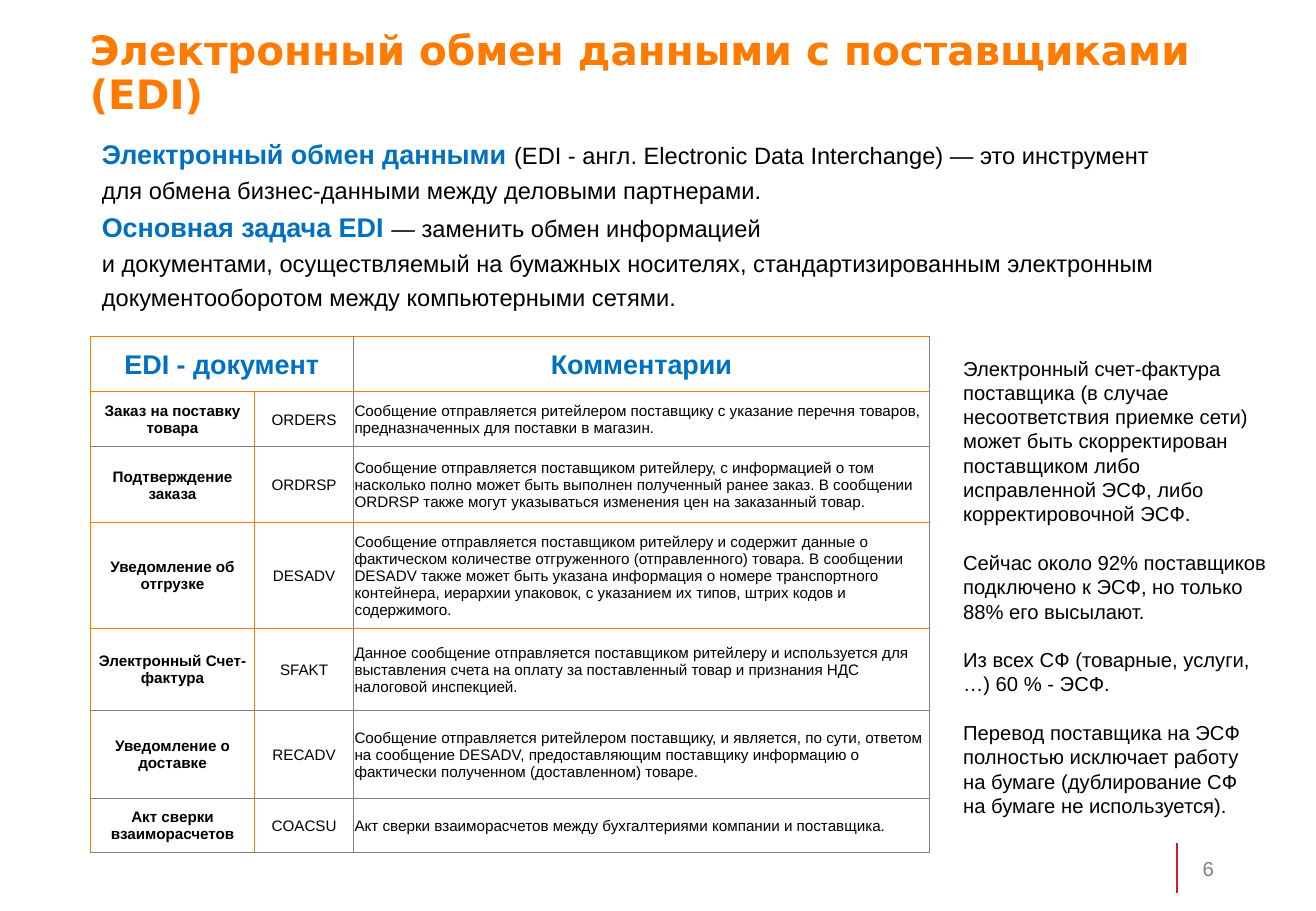
from dataclasses import dataclass

from lxml import etree
from pptx import Presentation
from pptx.dml.color import RGBColor
from pptx.enum.shapes import MSO_CONNECTOR
from pptx.enum.text import MSO_ANCHOR as Anchor, PP_ALIGN as Align
from pptx.oxml.ns import qn
from pptx.util import Pt


@dataclass(frozen=True)
class Theme:
    font: str = "Arial"
    title_font: str = "DejaVu Sans"
    orange: str = "FF7A00"
    blue: str = "0070C0"
    red: str = "CF1D20"
    gray: str = "808080"
    black: str = "000000"
    white: str = "FFFFFF"
    title_size: float = 24
    lead_size: float = 16
    intro_size: float = 14
    note_size: float = 12
    cell_size: float = 9


THEME = Theme()

TITLE = "Электронный обмен данными с поставщиками (EDI)"
INTRO = [
    ("Электронный обмен данными ",
     "(EDI - англ. Electronic Data Interchange) — это инструмент для обмена "
     "бизнес-данными между деловыми партнерами."),
    ("Основная задача EDI ",
     "— заменить обмен информацией \nи документами, осуществляемый на бумажных "
     "носителях, стандартизированным электронным документооборотом между "
     "компьютерными сетями."),
]
NOTES = [
    "Электронный счет-фактура поставщика (в случае несоответствия приемке сети) "
    "может быть скорректирован поставщиком либо исправленной ЭСФ, либо "
    "корректировочной ЭСФ.",
    "Сейчас около 92% поставщиков подключено к ЭСФ, но только 88% его высылают.",
    "Из всех СФ (товарные, услуги, …) 60 % - ЭСФ.",
    "Перевод поставщика на ЭСФ полностью исключает работу \vна бумаге "
    "(дублирование СФ \vна бумаге не используется).",
]
DOCUMENTS = [
    ("EDI - документ", "", "Комментарии"),
    ("Заказ на поставку товара", "ORDERS",
     "Сообщение отправляется ритейлером поставщику с указание перечня товаров, "
     "предназначенных для поставки в магазин."),
    ("Подтверждение заказа", "ORDRSP",
     "Сообщение отправляется поставщиком ритейлеру, с информацией о том насколько "
     "полно может быть выполнен полученный ранее заказ. В сообщении ORDRSP также "
     "могут указываться изменения цен на заказанный товар."),
    ("Уведомление об отгрузке", "DESADV",
     "Сообщение отправляется поставщиком ритейлеру и содержит данные о фактическом "
     "количестве отгруженного (отправленного) товара. В сообщении DESADV также "
     "может быть указана информация о номере транспортного контейнера, иерархии "
     "упаковок, с указанием их типов, штрих кодов и содержимого."),
    ("Электронный Счет-фактура", "SFAKT",
     "Данное сообщение отправляется поставщиком ритейлеру и используется для "
     "выставления счета на оплату за поставленный товар и признания НДС налоговой "
     "инспекцией."),
    ("Уведомление о доставке", "RECADV",
     "Сообщение отправляется ритейлером поставщику, и является, по сути, ответом на "
     "сообщение DESADV, предоставляющим поставщику информацию о фактически "
     "полученном (доставленном) товаре."),
    ("Акт сверки взаиморасчетов", "COACSU",
     "Акт сверки взаиморасчетов между бухгалтериями компании и поставщика."),
]
COLUMN_WIDTHS = [97.5, 58.5, 341.5]
ROW_HEIGHTS = [32.5, 32.8, 45, 62.7, 48.8, 52, 32]
ORANGE_ROW_EDGES = {0, 1, 3, 4}
ORANGE_COLUMN_EDGES = {0, 1}


def style_font(font, size, color, bold=False, name=THEME.font):
    font.name = name
    font.size = Pt(size)
    font.bold = bold
    font.color.rgb = RGBColor.from_string(color)


def add_text_box(slide, left, top, width, height):
    box = slide.shapes.add_textbox(Pt(left), Pt(top), Pt(width), Pt(height))
    box.text_frame.word_wrap = True
    return box.text_frame


def add_paragraphs(frame, count):
    """Extend the frame to count paragraphs and return them."""
    for _ in range(count - 1):
        frame.add_paragraph()
    return frame.paragraphs


def add_title(slide):
    title = slide.shapes.title
    title.left, title.top, title.width, title.height = Pt(46), Pt(14.4), Pt(672.5), Pt(59)
    frame = title.text_frame
    frame.text = TITLE
    frame.word_wrap = True
    frame.vertical_anchor = Anchor.TOP
    paragraph = frame.paragraphs[0]
    paragraph.alignment = Align.LEFT
    paragraph.line_spacing = 0.9
    style_font(paragraph.font, THEME.title_size, THEME.orange, True, THEME.title_font)


def add_intro(slide):
    frame = add_text_box(slide, 53.3, 74.2, 642.2, 115.2)
    for paragraph, (lead, rest) in zip(add_paragraphs(frame, len(INTRO)), INTRO):
        paragraph.line_spacing = 1.2
        run = paragraph.add_run()
        run.text = lead
        style_font(run.font, THEME.lead_size, THEME.blue, True)
        for index, line in enumerate(rest.split("\n")):
            if index:
                paragraph.add_line_break()
            run = paragraph.add_run()
            run.text = line
            style_font(run.font, THEME.intro_size, THEME.black)


def add_notes(slide):
    frame = add_text_box(slide, 563.8, 207.4, 197.3, 283.7)
    for index, paragraph in enumerate(add_paragraphs(frame, len(NOTES))):
        paragraph.text = NOTES[index]
        style_font(paragraph.font, THEME.note_size, THEME.black)
        if index:
            paragraph.space_before = Pt(14.4)


def set_border(cell, side, is_orange):
    color, width = (THEME.orange, 1) if is_orange else (THEME.gray, 0.5)
    properties = cell._tc.get_or_add_tcPr()
    line = etree.SubElement(properties, qn(f"a:ln{side}"), w=str(Pt(width)))
    fill = etree.SubElement(line, qn("a:solidFill"))
    etree.SubElement(fill, qn("a:srgbClr"), val=color)


def format_cell(cell, row, column):
    # The header has no line between its two merged columns.
    column_edges = ORANGE_COLUMN_EDGES if row else {0}
    set_border(cell, "L", column in column_edges)
    set_border(cell, "R", column + 1 in column_edges)
    set_border(cell, "T", row in ORANGE_ROW_EDGES)
    set_border(cell, "B", row + 1 in ORANGE_ROW_EDGES)
    cell.fill.solid()
    cell.fill.fore_color.rgb = RGBColor.from_string(THEME.white)
    cell.margin_left = cell.margin_right = cell.margin_top = Pt(0.7)
    cell.margin_bottom = 0
    cell.vertical_anchor = Anchor.MIDDLE


def add_documents_table(slide):
    frame = slide.shapes.add_table(
        len(ROW_HEIGHTS), len(COLUMN_WIDTHS), Pt(53.5), Pt(199.6),
        Pt(sum(COLUMN_WIDTHS)), Pt(sum(ROW_HEIGHTS)))
    table = frame.table
    table.first_row = table.horz_banding = False
    for column, width in zip(table.columns, COLUMN_WIDTHS):
        column.width = Pt(width)
    for row, height in zip(table.rows, ROW_HEIGHTS):
        row.height = Pt(height)
    table.cell(0, 0).merge(table.cell(0, 1))
    for row, texts in enumerate(DOCUMENTS):
        for column, text in enumerate(texts):
            cell = table.cell(row, column)
            format_cell(cell, row, column)
            if cell.is_spanned:
                continue
            cell.text = text
            paragraph = cell.text_frame.paragraphs[0]
            is_header = row == 0
            paragraph.alignment = Align.CENTER if is_header or column < 2 else Align.LEFT
            if is_header:
                style_font(paragraph.font, THEME.lead_size, THEME.blue, True)
            else:
                style_font(paragraph.font, THEME.cell_size, THEME.black, column == 0)


def add_page_number(slide):
    line = slide.shapes.add_connector(
        MSO_CONNECTOR.STRAIGHT, Pt(697.7), Pt(499.7), Pt(697.7), Pt(529.2))
    line.line.color.rgb = RGBColor.from_string(THEME.red)
    line.line.width = Pt(1.5)
    etree.SubElement(line._element.spPr, qn("a:effectLst"))
    frame = add_text_box(slide, 550.8, 500.4, 175.7, 28.8)
    frame.vertical_anchor = Anchor.MIDDLE
    paragraph = frame.paragraphs[0]
    paragraph.text = "6"
    paragraph.alignment = Align.RIGHT
    style_font(paragraph.font, THEME.note_size, THEME.gray)


def main():
    presentation = Presentation()
    presentation.slide_width, presentation.slide_height = Pt(780), Pt(540)
    slide = presentation.slides.add_slide(presentation.slide_layouts[5])
    add_title(slide)
    add_page_number(slide)
    add_intro(slide)
    add_documents_table(slide)
    add_notes(slide)
    presentation.save("out.pptx")


if __name__ == "__main__":
    main()
